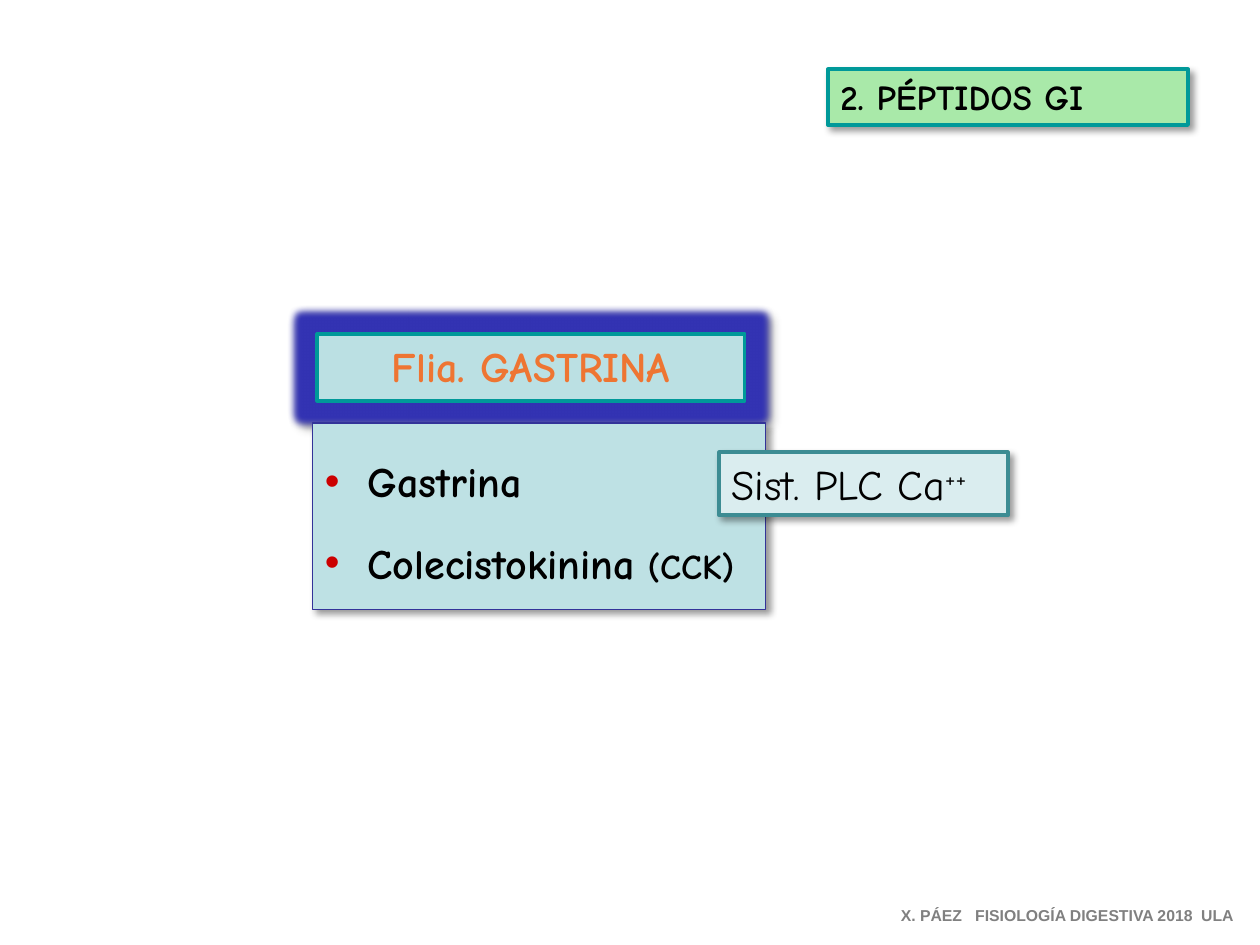
from lxml import etree
from pptx import Presentation
from pptx import util as u
from pptx.dml.color import RGBColor
from pptx.enum import shapes, text
from pptx.oxml.ns import qn

COLORS = {
    "black": "000000", "orange": "EE7532", "grey": "808080", "bullet": "CC0000",
    "teal": "009999", "dark_teal": "3C8C93", "navy": "333399", "glow": "3333B3",
    "family": "BBE0E3", "peptides": "BEE1E4", "system": "DAEDEF", "topic": "A9E9A9",
}


def add_panel(left, top, width, height, fill, line, line_width):
    """Add a filled, outlined rectangle with a soft shadow to the lower right."""
    panel = slide.shapes.add_shape(shapes.MSO_SHAPE.RECTANGLE,
                                   u.Cm(left), u.Cm(top), u.Cm(width), u.Cm(height))
    panel.fill.solid()
    panel.fill.fore_color.rgb = RGBColor.from_string(COLORS[fill])
    panel.line.color.rgb = RGBColor.from_string(COLORS[line])
    panel.line.width = u.Pt(line_width)
    panel.shadow.inherit = False
    effects = panel._element.spPr.find(qn("a:effectLst"))
    shadow = etree.SubElement(effects, qn("a:outerShdw"), blurRad=str(u.Pt(4)),
                              dist=str(u.Pt(3)), dir="2700000", algn="tl", rotWithShape="0")
    shade = etree.SubElement(shadow, qn("a:srgbClr"), val=COLORS["black"])
    etree.SubElement(shade, qn("a:alpha"), val="40000")
    panel.text_frame.word_wrap = True
    panel.text_frame.vertical_anchor = text.MSO_ANCHOR.TOP
    return panel


def write(paragraph, parts, color, bold, font="Comic Neue"):
    """Fill a paragraph with (wording, size) runs in one style."""
    paragraph.alignment = text.PP_ALIGN.LEFT
    for wording, size in parts:
        run = paragraph.add_run()
        run.text = wording
        run.font.size = u.Pt(size)
        run.font.name = font
        run.font.bold = bold
        run.font.color.rgb = RGBColor.from_string(COLORS[color])


prs = Presentation()
prs.slide_width, prs.slide_height = u.Cm(25.4), u.Cm(19.05)
slide = prs.slides.add_slide(prs.slide_layouts[6])

# Family heading with a glow
family = add_panel(6.4, 6.73, 8.61, 1.35, "family", "teal", 2.25)
glow = etree.Element(qn("a:glow"), rad=str(u.Pt(8)))
etree.SubElement(glow, qn("a:srgbClr"), val=COLORS["glow"])
family._element.spPr.find(qn("a:effectLst")).insert(0, glow)
heading = family.text_frame.paragraphs[0]
write(heading, [("Flia. GASTRINA", 24)], "orange", True)
heading.alignment = text.PP_ALIGN.CENTER

# Members of the family
peptides = add_panel(6.3, 8.53, 9.14, 3.76, "peptides", "navy", 0.75)
peptides.text_frame.margin_top = u.Cm(0.65)
members = [[("Gastrina", 24)], [("Colecistokinina", 24), (" (CCK)", 20)]]
for index, parts in enumerate(members):
    member = peptides.text_frame.paragraphs[0] if index == 0 else peptides.text_frame.add_paragraph()
    member.space_before = u.Pt(18 * index)
    write(member, parts, "black", True)
    props = member._p.get_or_add_pPr()
    props.set("marL", str(u.Cm(0.86)))
    props.set("indent", str(u.Cm(-0.86)))
    bullet_color = etree.SubElement(props, qn("a:buClr"))
    etree.SubElement(bullet_color, qn("a:srgbClr"), val=COLORS["bullet"])
    etree.SubElement(props, qn("a:buFont"), typeface="Arial")
    etree.SubElement(props, qn("a:buChar"), char="•")

# Signalling system
system = add_panel(14.5, 9.12, 5.82, 1.27, "system", "dark_teal", 2.25)
pathway = system.text_frame.paragraphs[0]
write(pathway, [("Sist. PLC Ca", 24), ("++", 24)], "black", False)
pathway.runs[1].font._element.set("baseline", "30000")

# Credit line, with wider gaps between its three parts
credit = slide.shapes.add_textbox(u.Cm(17.91), u.Cm(18.14), u.Cm(7.34), u.Cm(0.64))
credit.text_frame.word_wrap = True
credit_line = credit.text_frame.paragraphs[0]
write(credit_line, [(part, 9) for part in
                    ("X. PÁEZ", " ", "FISIOLOGÍA DIGESTIVA 2018", " ", "ULA")],
      "grey", True, "Arial")
for gap, spacing in ((1, 5), (3, 2.5)):
    credit_line.runs[gap].font._element.set("spc", str(int(spacing * 100)))

# Topic
topic = add_panel(16.69, 1.4, 7.26, 1.12, "topic", "teal", 2.25)
write(topic.text_frame.paragraphs[0], [("2. PÉPTIDOS GI", 20)], "black", True)

prs.save("out.pptx")
